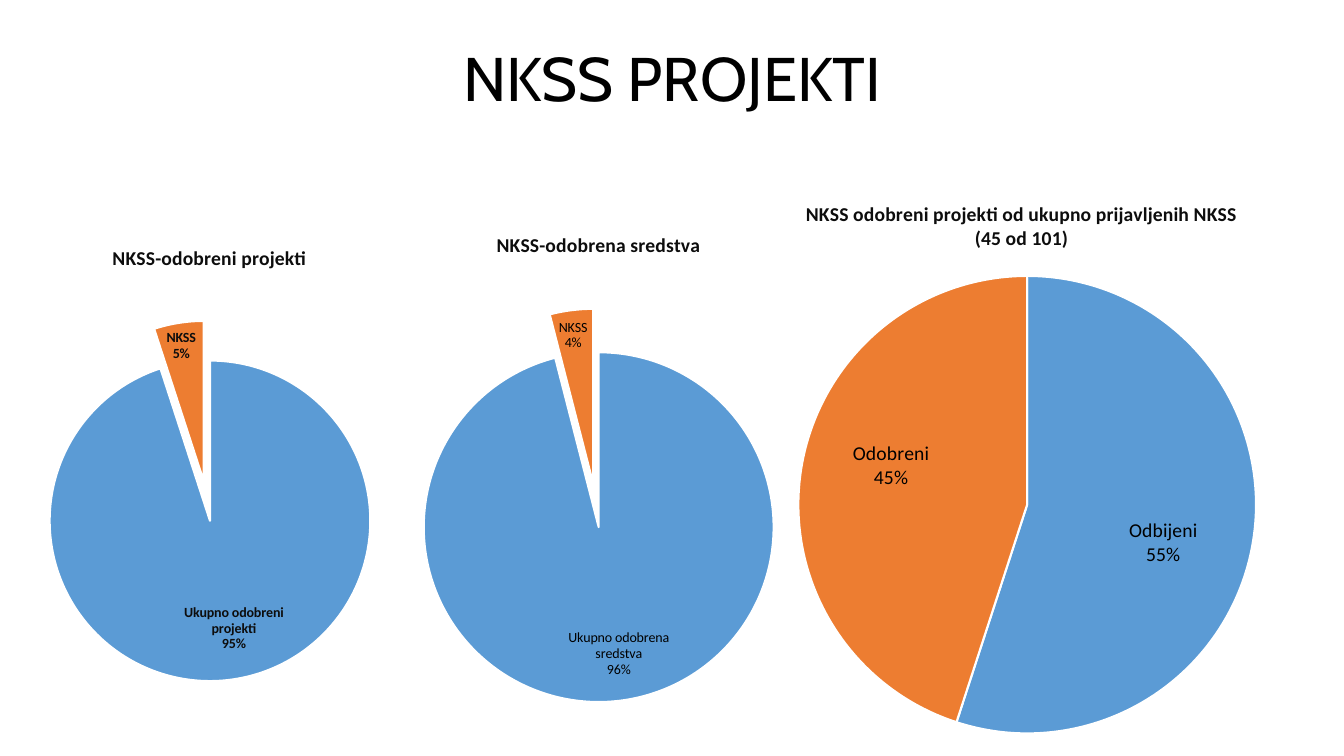
from dataclasses import dataclass

from lxml.etree import SubElement
from pptx import Presentation
from pptx.chart.data import CategoryChartData
from pptx.dml.color import RGBColor
from pptx.enum.chart import XL_CHART_TYPE, XL_LABEL_POSITION
from pptx.enum.text import MSO_ANCHOR, PP_ALIGN
from pptx.oxml.ns import qn
from pptx.util import Inches, Pt


@dataclass(frozen=True)
class Theme:
    heading_font: str = "Cabin"
    body_font: str = "Calibri"
    black: RGBColor = RGBColor(0, 0, 0)
    soft_black: RGBColor = RGBColor(0x0D, 0x0D, 0x0D)
    white: RGBColor = RGBColor(255, 255, 255)
    slices: tuple = (RGBColor(0x5B, 0x9B, 0xD5), RGBColor(0xED, 0x7D, 0x31))
    heading: Pt = Pt(44)
    chart_title: Pt = Pt(14)
    small: Pt = Pt(10)
    large: Pt = Pt(14)


def set_font(font, size, color, bold=False, name=Theme.body_font):
    font.name, font.size, font.bold = name, size, bold
    font.color.rgb = color


def add_layout(parent, index, **values):
    for old in parent.findall(qn("c:layout")):
        parent.remove(old)
    layout = SubElement(parent, qn("c:layout"))
    parent.insert(index, layout)
    manual = SubElement(layout, qn("c:manualLayout"))
    for tag, value in values.items():
        SubElement(manual, qn(f"c:{tag}")).set("val", str(value))


theme = Theme()
prs = Presentation()
prs.slide_width, prs.slide_height = Inches(13.33), Inches(7.5)
s = prs.slides.add_slide(prs.slide_layouts[6])

tb = s.shapes.add_textbox(Inches(0.92), Inches(0.4), Inches(11.5), Inches(0.82))
tf = tb.text_frame
tf.word_wrap = True
tf.vertical_anchor = MSO_ANCHOR.MIDDLE
p = tf.paragraphs[0]
p.text = "NKSS PROJEKTI"
p.alignment = PP_ALIGN.CENTER
p.line_spacing = 0.9
set_font(p.font, theme.heading, theme.black, name=theme.heading_font)

pies = [
    dict(
        box=(6.97, 1.79, 6.36, 5.71), center=(10.19, 5.01), diameter=4.54,
        title=["NKSS odobreni projekti od ukupno prijavljenih NKSS", "(45 od 101)"],
        title_at=(7.96, 1.96), values={"Odbijeni": 55, "Odobreni": 45},
        explosion=0, size=theme.large, color=theme.black, bold=False,
        place=XL_LABEL_POSITION.CENTER, shifts=[(0.23, 0.2), (-0.23, -0.21)],
    ),
    dict(
        box=(3.7, 2.11, 4.49, 5.39), center=(5.94, 5.23), diameter=3.47,
        title=["NKSS-odobrena sredstva"], title_at=(4.89, 2.26),
        values={"Ukupno odobrena sredstva": 96, "NKSS": 4},
        explosion=25, size=theme.small, color=theme.black, bold=False,
        place=XL_LABEL_POSITION.INSIDE_END, shifts=[(0.49, -0.17), (-0.13, 0.03)],
    ),
    dict(
        box=(0, 2.23, 4.17, 5.01), center=(2.08, 5.17), diameter=3.18,
        title=["NKSS-odobreni projekti"], title_at=(1.08, 2.39),
        values={"Ukupno odobreni projekti": 95, "NKSS": 5},
        explosion=25, size=theme.small, color=theme.soft_black, bold=True,
        place=XL_LABEL_POSITION.INSIDE_END, shifts=[(0.49, -0.21), (-0.13, 0.01)],
    ),
]

for pie in pies:
    left, top, width, height = pie["box"]
    data = CategoryChartData()
    data.categories = list(pie["values"])
    data.add_series("Series 1", list(pie["values"].values()))
    chart = s.shapes.add_chart(
        XL_CHART_TYPE.PIE, *(Inches(v) for v in pie["box"]), data
    ).chart
    chart.has_legend = False
    set_font(chart.font, theme.small, theme.black)

    chart.has_title = True
    tf = chart.chart_title.text_frame
    for i, line in enumerate(pie["title"]):
        p = tf.add_paragraph() if i else tf.paragraphs[0]
        p.text = line
        p.alignment = PP_ALIGN.CENTER
        set_font(p.font, theme.chart_title, theme.soft_black, True)
    x, y = pie["title_at"]
    add_layout(
        chart.chart_title._element, 1, xMode="edge", yMode="edge",
        x=round((x - left) / width, 3), y=round((y - top) / height, 3),
    )

    cx, cy = pie["center"]
    size = pie["diameter"]
    add_layout(
        chart._chartSpace.chart.plotArea, 0,
        layoutTarget="inner", xMode="edge", yMode="edge",
        x=round((cx - size / 2 - left) / width, 3),
        y=round((cy - size / 2 - top) / height, 3),
        w=round(size / width, 3), h=round(size / height, 3),
    )

    plot = chart.plots[0]
    plot.vary_by_categories = True
    series = plot.series[0]
    for i, color in enumerate(theme.slices):
        point = series.points[i]
        point.format.fill.solid()
        point.format.fill.fore_color.rgb = color
        point.format.line.color.rgb = theme.white
        point.format.line.width = Pt(1.5)

    if pie["explosion"]:
        dpt = series._element.findall(qn("c:dPt"))[1]
        explosion = SubElement(dpt, qn("c:explosion"))
        explosion.set("val", str(pie["explosion"]))
        dpt.find(qn("c:spPr")).addprevious(explosion)

    labels = series.data_labels
    labels.show_category_name = labels.show_percentage = True
    labels.show_value = False
    labels.number_format, labels.number_format_is_linked = "0%", False
    labels.position = pie["place"]
    set_font(labels.font, pie["size"], pie["color"], pie["bold"])
    for i, (dx, dy) in enumerate(pie["shifts"]):
        label = series.points[i].data_label
        set_font(label.font, pie["size"], pie["color"], pie["bold"])
        label.position = pie["place"]
        dlbl = labels._element.findall(qn("c:dLbl"))[i]
        add_layout(dlbl, 1, x=round(dx / width, 3), y=round(dy / height, 3))
        for tag, shown in (("showVal", 0), ("showCatName", 1), ("showPercent", 1)):
            dlbl.find(qn(f"c:{tag}")).set("val", str(shown))
    for body in labels._element.iter(qn("a:bodyPr")):
        body.set("wrap", "square")

prs.save("out.pptx")
